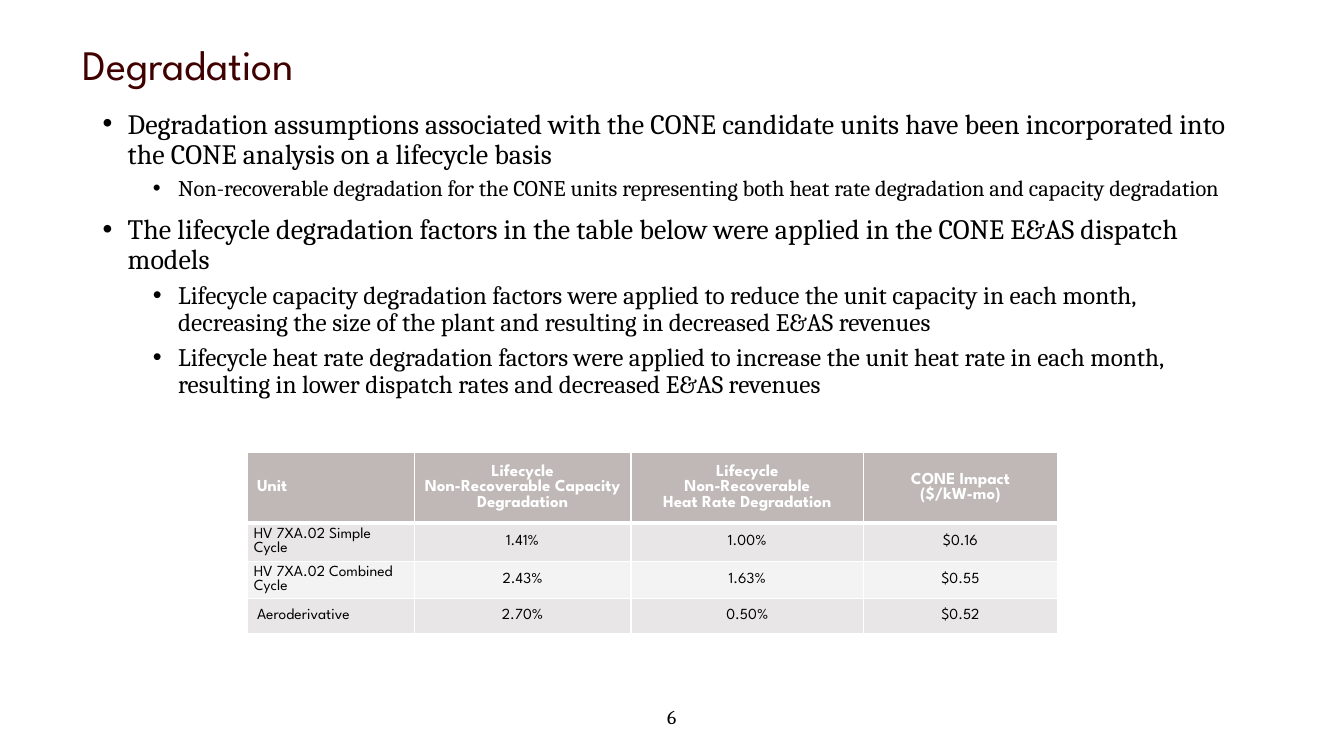
from lxml import etree
from pptx import Presentation
from pptx import util as u
from pptx.dml import color
from pptx.enum import text as t
from pptx.oxml import ns

COLORS = {
    "title": "400000",
    "text": "000000",
    "white": "FFFFFF",
    "header": "BFB8B7",
    "odd_row": "E8E6E6",
    "even_row": "F4F3F3",
}


def write(paragraph, content, size, font="Cambria", fill="text", bold=False,
          align=t.PP_ALIGN.LEFT, spacing=None, before=None):
    paragraph.alignment = align
    if spacing:
        paragraph.line_spacing = spacing
    if before:
        paragraph.space_before = u.Pt(before)
    run = paragraph.add_run()
    run.text = content
    run.font.size = u.Pt(size)
    run.font.name = font
    run.font.bold = bold
    run.font.color.rgb = color.RGBColor.from_string(COLORS[fill])


def add_box(left, top, width, height, anchor=t.MSO_ANCHOR.TOP):
    box = slide.shapes.add_textbox(u.Pt(left), u.Pt(top), u.Pt(width), u.Pt(height))
    box.text_frame.word_wrap = True
    box.text_frame.vertical_anchor = anchor
    return box.text_frame


presentation = Presentation()
presentation.slide_width = u.Pt(960)
presentation.slide_height = u.Pt(540)
slide = presentation.slides.add_slide(presentation.slide_layouts[6])

page_number = add_box(384.5, 501.8, 190.8, 31)
write(page_number.paragraphs[0], "6", 14, align=t.PP_ALIGN.CENTER, spacing=0.9)

title = add_box(51.8, 8.6, 828, 78.5, t.MSO_ANCHOR.MIDDLE)
write(title.paragraphs[0], "Degradation", 30, font="League Spartan", fill="title", spacing=0.9)

bullets = [
    (0, 20, "Degradation assumptions associated with the CONE candidate units have been "
            "incorporated into the CONE analysis on a lifecycle basis"),
    (1, 16, "Non-recoverable degradation for the CONE units representing both heat rate "
            "degradation and capacity degradation"),
    (0, 20, "The lifecycle degradation factors in the table below were applied in the CONE "
            "E&AS dispatch models"),
    (1, 18, "Lifecycle capacity degradation factors were applied to reduce the unit capacity "
            "in each month, decreasing the size of the plant and resulting in decreased E&AS revenues"),
    (1, 18, "Lifecycle heat rate degradation factors were applied to increase the unit heat rate "
            "in each month, resulting in lower dispatch rates and decreased E&AS revenues"),
]
body = add_box(66.2, 74.9, 828, 411.8)
for index, (level, size, content) in enumerate(bullets):
    paragraph = body.add_paragraph() if index else body.paragraphs[0]
    paragraph.level = level
    properties = paragraph._p.get_or_add_pPr()
    properties.set("marL", str(u.Pt(18 + 36 * level)))
    properties.set("indent", str(u.Pt(-18)))
    etree.SubElement(properties, ns.qn("a:buFont"), typeface="Arial")
    etree.SubElement(properties, ns.qn("a:buChar"), char="•")
    write(paragraph, content, size, spacing=0.9, before=(5 if level else 10) if index else None)

rows = [
    ["Unit", "Lifecycle\nNon-Recoverable Capacity Degradation",
     "Lifecycle\nNon-Recoverable\nHeat Rate Degradation", "CONE Impact\n($/kW-mo)"],
    ["HV 7XA.02 Simple Cycle", "1.41%", "1.00%", "$0.16"],
    ["HV 7XA.02 Combined Cycle", "2.43%", "1.63%", "$0.55"],
    ["Aeroderivative", "2.70%", "0.50%", "$0.52"],
]
column_widths = [119.5, 154.8, 166.3, 138.2]
row_heights = [50.4, 27.2, 24.8, 25.6]
row_fills = ["header", "odd_row", "even_row", "odd_row"]
table = slide.shapes.add_table(
    4, 4, u.Pt(176.4), u.Pt(323.3), u.Pt(sum(column_widths)), u.Pt(sum(row_heights))).table
for column, width in zip(table.columns, column_widths):
    column.width = u.Pt(width)
for row, height in zip(table.rows, row_heights):
    row.height = u.Pt(height)

for row_index, values in enumerate(rows):
    for column_index, value in enumerate(values):
        cell = table.cell(row_index, column_index)
        cell.vertical_anchor = t.MSO_ANCHOR.MIDDLE
        if value not in ("Unit", "Aeroderivative"):
            cell.margin_left = cell.margin_right = u.Pt(5)
            cell.margin_top = cell.margin_bottom = u.Pt(0)
        for side in ("L", "R", "T", "B"):
            under_header = (row_index, side) in ((0, "B"), (1, "T"))
            line = etree.SubElement(cell._tc.get_or_add_tcPr(), ns.qn(f"a:ln{side}"),
                                    w=str(u.Pt(3 if under_header else 1)))
            line_fill = etree.SubElement(line, ns.qn("a:solidFill"))
            etree.SubElement(line_fill, ns.qn("a:srgbClr"), val=COLORS["white"])
        cell.fill.solid()
        cell.fill.fore_color.rgb = color.RGBColor.from_string(COLORS[row_fills[row_index]])
        is_header = row_index == 0
        for index, content in enumerate(value.split("\n")):
            frame = cell.text_frame
            paragraph = frame.add_paragraph() if index else frame.paragraphs[0]
            write(paragraph, content, 12 if is_header else 11, font="League Spartan",
                  fill="white" if is_header else "text", bold=is_header,
                  align=t.PP_ALIGN.CENTER if column_index else t.PP_ALIGN.LEFT)

presentation.save("out.pptx")
